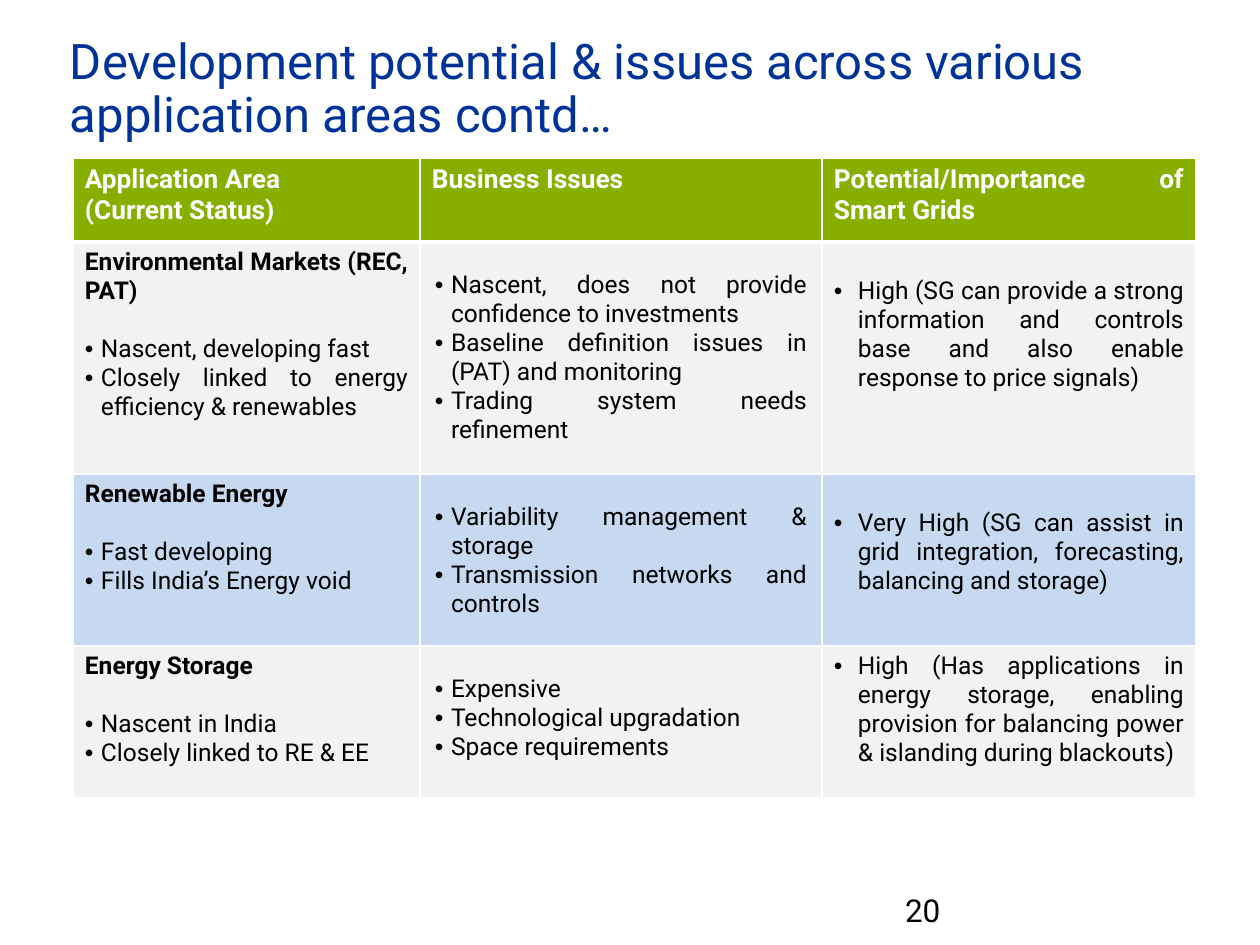
import pptx
import pptx.dml.color
import pptx.enum.text
import pptx.oxml.ns
import pptx.util
from lxml import etree

SCALE = 914400 / 126  # EMU per px
COLORS = {
    "title": "003399",
    "text": "000000",
    "white": "FFFFFF",
    "header": "87AF00",
    "grey": "F2F2F2",
    "blue": "C6D9F1",
}
FONT = "Roboto"
ALIGN = pptx.enum.text.PP_ALIGN
LINE = 29  # height of one body line, px
PAD = 6    # usual inset above and below text, px


def emu(px):
    return pptx.util.Emu(round(px * SCALE))


def rgb(name):
    return pptx.dml.color.RGBColor.from_string(COLORS[name])


def add_child(parent, tag, **attributes):
    return etree.SubElement(parent, pptx.oxml.ns.qn(tag), attributes)


def write(paragraph, text, size=14, color="text", bold=False, align=ALIGN.LEFT,
          bullet_indent=0, space_before=0, line_spacing=None):
    """Put formatted text in a paragraph; a bullet hangs by bullet_indent px."""
    paragraph.alignment = align
    if line_spacing:
        paragraph.line_spacing = line_spacing
    if space_before:
        paragraph.space_before = emu(space_before)
    if bullet_indent:
        properties = paragraph._p.get_or_add_pPr()
        properties.set("marL", str(emu(bullet_indent)))
        properties.set("indent", str(-emu(bullet_indent)))
        add_child(properties, "a:buFont", typeface="Arial")
        add_child(properties, "a:buChar", char="•")
    run = paragraph.add_run()
    run.text = text
    run.font.name = FONT
    run.font.size = pptx.util.Pt(size)
    run.font.bold = bold
    run.font.color.rgb = rgb(color)


class SlideBuilder:
    def __init__(self, slide):
        self.slide = slide

    def text(self, left, top, width, height, text, side_inset=13, **style):
        box = self.slide.shapes.add_textbox(*map(emu, (left, top, width, height)))
        frame = box.text_frame
        frame.word_wrap = True
        frame.margin_left = frame.margin_right = emu(side_inset)
        frame.margin_top = frame.margin_bottom = emu(PAD)
        write(frame.paragraphs[0], text, **style)

    def table(self, left, top, columns, rows):
        shape = self.slide.shapes.add_table(
            len(rows), len(columns), emu(left), emu(top),
            emu(sum(columns)), emu(sum(rows)))
        table = shape.table
        table.horz_banding = False
        for column, width in zip(table.columns, columns):
            column.width = emu(width)
        for row, height in zip(table.rows, rows):
            row.height = emu(height)
        return table

    def cell(self, cell, fill, paragraphs, top=PAD, side=12, bottom_border=1):
        """Fill a cell; paragraphs is a list of (text, style) pairs."""
        properties = cell._tc.get_or_add_tcPr()
        for edge, points in (("L", 1), ("R", 1), ("T", 1), ("B", bottom_border)):
            line = add_child(properties, f"a:ln{edge}", w=str(pptx.util.Pt(points)))
            solid = add_child(line, "a:solidFill")
            add_child(solid, "a:srgbClr", val=COLORS["white"])
        cell.fill.solid()
        cell.fill.fore_color.rgb = rgb(fill)
        cell.margin_left = cell.margin_right = emu(side)
        cell.margin_top, cell.margin_bottom = emu(top), emu(0)
        frame = cell.text_frame
        for index, (text, style) in enumerate(paragraphs):
            paragraph = frame.add_paragraph() if index else frame.paragraphs[0]
            write(paragraph, text, align=ALIGN.JUSTIFY, **style)


HEADERS = [
    ["Application Area", "(Current Status)"],
    ["Business Issues"],
    ["Potential/Importance of Smart Grids"],
]
# fill, area, status bullets, issue bullets, potential, top inset of potential
AREAS = [
    ("grey", "Environmental Markets (REC, PAT)",
     ["Nascent, developing fast",
      "Closely linked to energy efficiency & renewables"],
     ["Nascent, does not provide confidence to investments",
      "Baseline definition issues in (PAT) and monitoring",
      "Trading system needs refinement"],
     "High (SG can provide a strong information and controls base and also "
     "enable response to price signals)", PAD + LINE),
    ("blue", "Renewable Energy",
     ["Fast developing", "Fills India’s Energy void"],
     ["Variability management & storage",
      "Transmission networks and controls"],
     "Very High (SG can assist in grid integration, forecasting, balancing "
     "and storage)", PAD + LINE),
    ("grey", "Energy Storage",
     ["Nascent in India", "Closely linked to RE & EE"],
     ["Expensive", "Technological upgradation", "Space requirements"],
     "High (Has applications in energy storage, enabling provision for "
     "balancing power & islanding during blackouts)", PAD),
]


def main():
    presentation = pptx.Presentation()
    presentation.slide_width, presentation.slide_height = emu(1260), emu(945)
    slide = presentation.slides.add_slide(presentation.slide_layouts[6])
    builder = SlideBuilder(slide)

    # Slide number
    builder.text(892, 885, 294, 50, "20", size=18)

    # Table header
    table = builder.table(73, 158, [347, 402, 374], [84, 232, 172, 152])
    header_style = {"size": 15, "color": "white", "bold": True}
    for column, lines in enumerate(HEADERS):
        builder.cell(table.cell(0, column), "header",
                     [(line, header_style) for line in lines], bottom_border=3)

    # Table body
    bullet = {"bullet_indent": 16}
    for row, (fill, area, status, issues, potential, top) in enumerate(AREAS, 1):
        area_lines = [(area, {"bold": True})]
        for index, text in enumerate(status):
            gap = 0 if index else LINE
            area_lines.append((text, {**bullet, "space_before": gap}))
        builder.cell(table.cell(row, 0), fill, area_lines)
        builder.cell(table.cell(row, 1), fill,
                     [(text, bullet) for text in issues], top=LINE, side=15)
        builder.cell(table.cell(row, 2), fill,
                     [(potential, {"bullet_indent": 24})], top=top)

    # Title
    builder.text(53, 31, 1166, 104,
                 "Development potential & issues across various application areas contd…",
                 side_inset=17, size=28, color="title", line_spacing=0.9)

    presentation.save("out.pptx")


if __name__ == "__main__":
    main()
